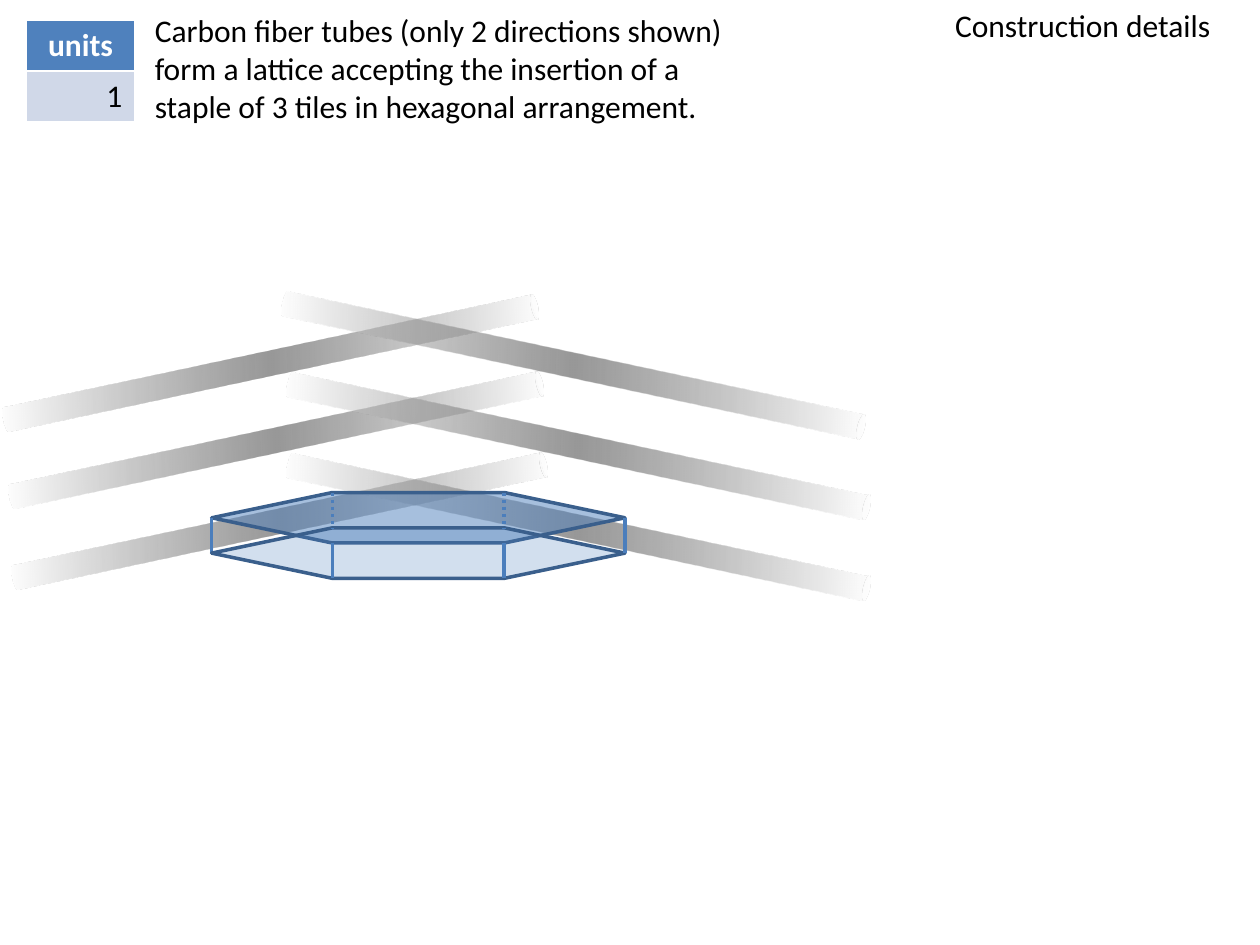
"""Builds the construction details slide with a carbon fiber lattice and a hexagonal tile."""
import dataclasses

import lxml.etree
import pptx
import pptx.dml.color
import pptx.enum.dml
import pptx.enum.shapes
import pptx.enum.text
import pptx.oxml.ns
import pptx.util

Inches = pptx.util.Inches
Pt = pptx.util.Pt
qn = pptx.oxml.ns.qn
PP_ALIGN = pptx.enum.text.PP_ALIGN


@dataclasses.dataclass(frozen=True)
class Theme:
    """Colours, font and sizes of the slide."""
    font: str = "Calibri"
    text_size: int = 18
    line_width: int = 2
    text: str = "000000"
    white: str = "FFFFFF"
    accent: str = "4F81BD"
    band: str = "D0D8E8"
    tile_outline: str = "3A5F8C"
    tile_edge: str = "4B7EBC"
    tube_stops: tuple = ((0, "FFFFFF", 50), (50, "000000", 40), (100, "FFFFFF", 50))


THEME = Theme()


def rgb(code):
    """Return a colour object for a hex code."""
    return pptx.dml.color.RGBColor.from_string(code)


def set_alpha(colour, percent):
    """Give a colour element an opacity in percent."""
    lxml.etree.SubElement(colour, qn("a:alpha")).set("val", str(percent * 1000))


def write_text(frame, words, colour=THEME.text, bold=False, align=PP_ALIGN.LEFT):
    """Set the words of a text frame and format them."""
    frame.text = words
    for paragraph in frame.paragraphs:
        paragraph.alignment = align
        for run in paragraph.runs:
            run.font.name = THEME.font
            run.font.size = Pt(THEME.text_size)
            run.font.bold = bold
            run.font.color.rgb = rgb(colour)


def add_heading(slide, words):
    """Place the slide title in the top right corner."""
    heading = slide.shapes.title
    heading.left, heading.top = Inches(7.48), Inches(0)
    heading.width, heading.height = Inches(2.25), Inches(0.4)
    frame = heading.text_frame
    frame.word_wrap = False
    frame.auto_size = pptx.enum.text.MSO_AUTO_SIZE.SHAPE_TO_FIT_TEXT
    frame.vertical_anchor = pptx.enum.text.MSO_ANCHOR.TOP
    write_text(frame, words)


def add_description(slide, words):
    """Add the wrapped explanation beside the table."""
    description = slide.shapes.add_textbox(Inches(1.13), Inches(0.04), Inches(4.75), Inches(1.01))
    description.text_frame.word_wrap = True
    write_text(description.text_frame, words)


def add_units_table(slide):
    """Add the small table with the number of units."""
    units = slide.shapes.add_table(2, 1, Inches(0.21), Inches(0.16), Inches(0.86), Inches(0.81)).table
    rows = (("units", THEME.accent, THEME.white, True, PP_ALIGN.CENTER),
            ("1", THEME.band, THEME.text, False, PP_ALIGN.RIGHT))
    for index, (words, fill, colour, bold, align) in enumerate(rows):
        cell = units.cell(index, 0)
        cell.fill.solid()
        cell.fill.fore_color.rgb = rgb(fill)
        write_text(cell.text_frame, words, colour, bold, align)


def add_tube(slide, left, top, length, rotation, flipped):
    """Add a translucent tube that fades out at both ends."""
    tube = slide.shapes.add_shape(pptx.enum.shapes.MSO_SHAPE.CAN,
                                  Inches(left), Inches(top), Inches(0.2), Inches(length))
    tube.rotation = rotation
    tube.shadow.inherit = False
    tube.line.fill.background()
    tube.fill.gradient()
    properties = tube._element.spPr
    if flipped:
        properties.find(qn("a:xfrm")).set("flipH", "1")
    gradient = properties.find(qn("a:gradFill"))
    gradient.clear()
    gradient.set("rotWithShape", "1")
    stops = lxml.etree.SubElement(gradient, qn("a:gsLst"))
    for position, code, opacity in THEME.tube_stops:
        stop = lxml.etree.SubElement(stops, qn("a:gs"), pos=str(position * 1000))
        set_alpha(lxml.etree.SubElement(stop, qn("a:srgbClr"), val=code), opacity)
    lxml.etree.SubElement(gradient, qn("a:lin"), ang="4800000", scaled="0")


def add_hexagon(tile, top, opacity):
    """Add one translucent hexagonal face of the tile."""
    face = tile.shapes.add_shape(pptx.enum.shapes.MSO_SHAPE.HEXAGON,
                                 Inches(1.68), Inches(top), Inches(3.28), Inches(0.4))
    face.adjustments[0] = 2.387
    face.shadow.inherit = False
    face.fill.solid()
    face.fill.fore_color.rgb = rgb(THEME.accent)
    set_alpha(face._element.spPr.find(qn("a:solidFill"))[0], opacity)
    face.line.color.rgb = rgb(THEME.tile_outline)
    face.line.width = Pt(THEME.line_width)


def add_edge(tile, x, top, hidden=False):
    """Add a vertical tile edge, dotted when it lies behind."""
    edge = tile.shapes.add_connector(pptx.enum.shapes.MSO_CONNECTOR.STRAIGHT,
                                     Inches(x), Inches(top), Inches(x), Inches(top + 0.28))
    edge.line.color.rgb = rgb(THEME.tile_edge)
    edge.line.width = Pt(THEME.line_width)
    if hidden:
        edge.line.dash_style = pptx.enum.dml.MSO_LINE.ROUND_DOT
    lxml.etree.SubElement(edge._element.spPr, qn("a:effectLst"))


def add_tile(slide):
    """Add the hexagonal tile as a group of two faces and six edges."""
    tile = slide.shapes.add_group_shape()
    add_hexagon(tile, 3.91, 50)
    add_edge(tile, 1.68, 4.11)
    add_hexagon(tile, 4.19, 25)
    add_edge(tile, 4.96, 4.11)
    for top, hidden in ((3.91, True), (4.31, False)):
        for x in (2.64, 4):
            add_edge(tile, x, top, hidden)


def main():
    """Build and save the slide."""
    deck = pptx.Presentation()
    deck.slide_width, deck.slide_height = Inches(10), Inches(7.5)
    slide = deck.slides.add_slide(deck.slide_layouts.get_by_name("Title Only"))
    for left, top in ((2.12, 1.97), (2.09, 1.33), (2.05, 0.72)):
        add_tube(slide, left, top, 4.33, 78, True)
    for left, top in ((4.49, 1.82), (4.49, 1.18), (4.45, 0.54)):
        add_tube(slide, left, top, 4.72, 102, False)
    add_units_table(slide)
    add_description(slide, "Carbon fiber tubes (only 2 directions shown) form a lattice accepting "
                           "the insertion of a staple of 3 tiles in hexagonal arrangement.")
    add_tile(slide)
    add_heading(slide, "Construction details")
    deck.save("out.pptx")


if __name__ == "__main__":
    main()
